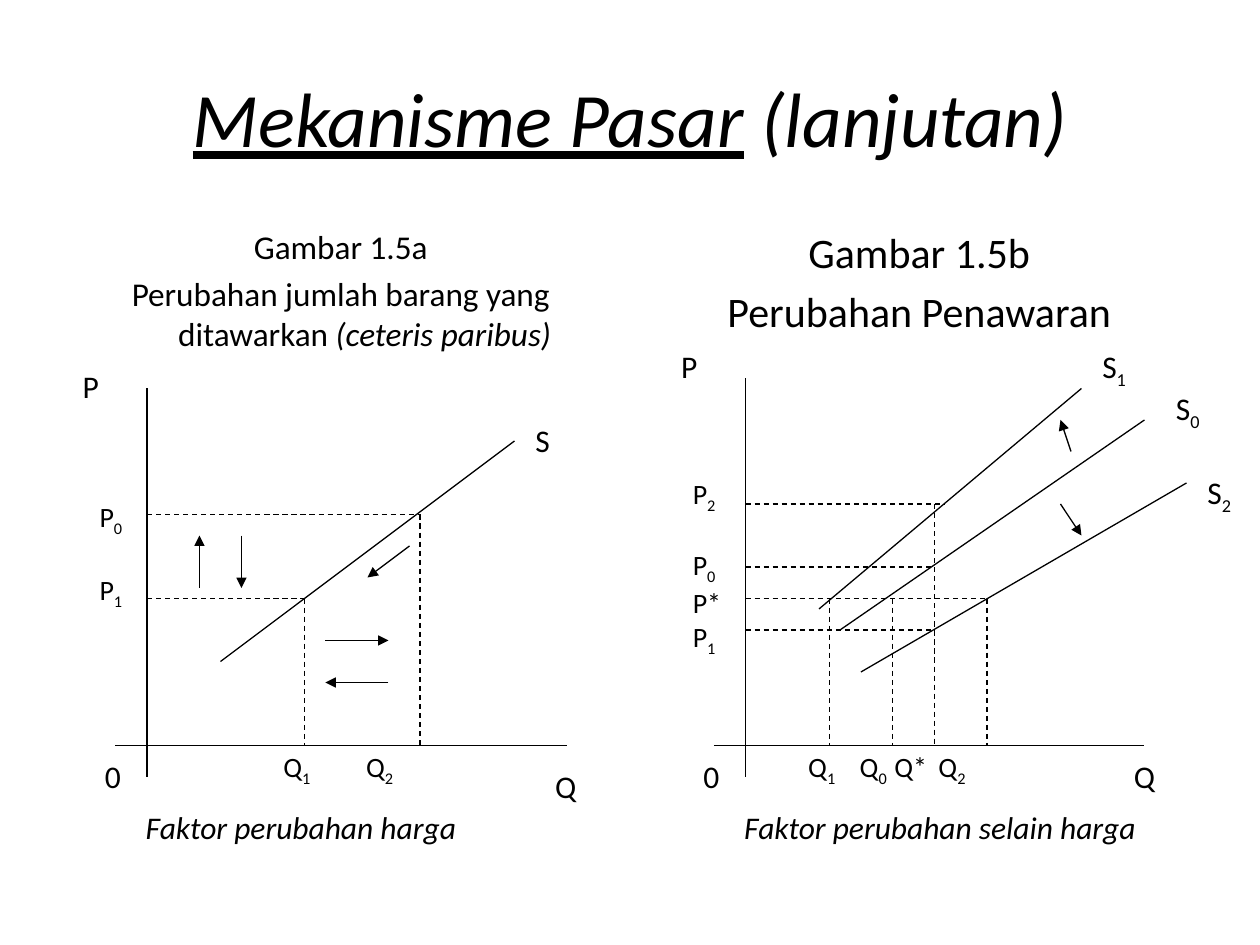
from lxml import etree
from pptx import Presentation
from pptx.dml.color import RGBColor
from pptx.enum.dml import MSO_LINE
from pptx.enum.shapes import MSO_CONNECTOR
from pptx.enum.text import MSO_ANCHOR, PP_ALIGN
from pptx.oxml.ns import qn
from pptx.util import Inches, Pt

STRAIGHT = MSO_CONNECTOR.STRAIGHT
DASH = MSO_LINE.DASH
CENTER = PP_ALIGN.CENTER
MIDDLE = MSO_ANCHOR.MIDDLE

COLOURS = {"ink": "000000", "background": "FFFFFF"}
FONT = "Calibri"
SLIDE_WIDTH, SLIDE_HEIGHT = Inches(10), Inches(7.5)
COLUMNS, ROWS = 120, 90
AXIS_ROW = 71
LABEL_HEIGHT = 5
ITALIC = {"italic": True}

SUPPLY_MOVEMENT = {
    "axes": [(14, 37, 14, 74), (11, 71, 54, 71)],
    "curves": [(21, 63, 49, 42)],
    "price_guides": [(57, 29), (49, 40)],
    "quantity_guides": [(29, 57), (40, 49)],
    "arrows": [(19, 56, 19, 51), (23, 51, 23, 56), (31, 61, 37, 61),
               (37, 65, 31, 65), (39, 52, 35, 55)],
    "names": [("P", "", 6.7, 34.4), ("0", "", 8.8, 71.5),
              ("Q", "", 51.7, 72.5), ("S", "", 49.8, 39.5)],
    "price_column": 8.3,
    "prices": [("P", "0", 47), ("P", "1", 53.9)],
    "quantities": [("Q", "1", 25.8), ("Q", "2", 33.7)],
    "footer": ("Faktor perubahan harga", 12.7, 36.6),
    "caption_column": 6,
    "caption_size": 19,
    "caption": [
        [("Gambar 1.5a", {})],
        [("Perubahan jumlah barang yang ditawarkan ", {}),
         ("(ceteris paribus)", ITALIC)],
    ],
}

SUPPLY_SHIFT = {
    "axes": [(71, 36, 71, 74), (68, 71, 109, 71)],
    "curves": [(78, 58, 103, 37), (82, 64, 113, 46), (80, 60, 109, 40)],
    "price_guides": [(48, 90), (54, 89), (57, 94), (60, 89)],
    "quantity_guides": [(79, 57), (85, 57), (94, 57), (89, 48)],
    "arrows": [(101, 48, 103, 51), (102, 43, 101, 40)],
    "names": [("P", "", 63.7, 32.5), ("0", "", 65.8, 71.5),
              ("Q", "", 106.8, 71.5), ("S", "1", 103.8, 32.5),
              ("S", "0", 110.8, 36.5), ("S", "2", 113.8, 44.5)],
    "price_column": 64.8,
    "prices": [("P", "2", 44.8), ("P", "0", 51.6),
               ("P*", "", 55.2), ("P", "1", 58.4)],
    "quantities": [("Q", "1", 75.8), ("Q", "0", 80.7),
                   ("Q*", "", 84), ("Q", "2", 88.2)],
    "footer": ("Faktor perubahan selain harga", 69.7, 45.7),
    "caption_column": 61.1,
    "caption_size": 24,
    "caption": [[("Gambar 1.5b", {})], [("Perubahan Penawaran", {})]],
}


def across(column):
    return round(SLIDE_WIDTH * column / COLUMNS)


def down(row):
    return round(SLIDE_HEIGHT * row / ROWS)


def add_run(paragraph, text, size, formats):
    run = paragraph.add_run()
    run.text = text
    settings = {"name": FONT, "size": Pt(size), **formats}
    for name, value in settings.items():
        setattr(run.font, name, value)
    run.font.color.rgb = RGBColor.from_string(COLOURS["ink"])
    return run


def add_text_box(slide, column, row, width, height):
    box = slide.shapes.add_textbox(across(column), down(row), across(width), down(height))
    box.text_frame.word_wrap = True
    return box.text_frame


def add_label(slide, text, subscript, column, row, size):
    width = 5.8 if subscript or len(text) > 1 else 5
    frame = add_text_box(slide, column, row, width, LABEL_HEIGHT)
    paragraph = frame.paragraphs[0]
    add_run(paragraph, text, size, {})
    if subscript:
        run = add_run(paragraph, subscript, size, {})
        run._r.get_or_add_rPr().set("baseline", "-25000")


def add_line(slide, start_column, start_row, end_column, end_row, dashed=False, arrow=False):
    connector = slide.shapes.add_connector(
        STRAIGHT, across(start_column), down(start_row), across(end_column), down(end_row))
    connector.line.color.rgb = RGBColor.from_string(COLOURS["ink"])
    connector.line.width = Pt(0.75)
    if dashed:
        connector.line.dash_style = DASH
    properties = connector._element.spPr
    if arrow:
        etree.SubElement(properties.find(qn("a:ln")), qn("a:tailEnd"), type="triangle")
    etree.SubElement(properties, qn("a:effectLst"))


def add_title(slide):
    title = slide.shapes.title
    placement = {"left": across(6), "top": down(3.6), "width": across(108), "height": down(15)}
    for name, value in placement.items():
        setattr(title, name, value)
    title.text_frame.vertical_anchor = MIDDLE
    paragraph = title.text_frame.paragraphs[0]
    paragraph.alignment = CENTER
    add_run(paragraph, "Mekanisme Pasar", 44, {"italic": True, "underline": True})
    add_run(paragraph, " (lanjutan)", 44, ITALIC)


def add_caption(slide, column, size, lines):
    frame = add_text_box(slide, column, 21, 52.9, 59.4)
    for index, line in enumerate(lines):
        paragraph = frame.add_paragraph() if index else frame.paragraphs[0]
        paragraph.alignment = CENTER
        paragraph.space_before = Pt(size * 0.2)
        properties = paragraph._p.get_or_add_pPr()
        properties.set("marL", str(Inches(0.38)))
        properties.set("indent", str(-Inches(0.38)))
        for text, formats in line:
            add_run(paragraph, text, size, formats)


def add_diagram(slide, diagram):
    add_caption(slide, diagram["caption_column"], diagram["caption_size"], diagram["caption"])
    for line in diagram["axes"] + diagram["curves"]:
        add_line(slide, *line)
    price_axis = diagram["axes"][0][0]
    for row, end_column in diagram["price_guides"]:
        add_line(slide, price_axis, row, end_column, row, dashed=True)
    for column, start_row in diagram["quantity_guides"]:
        add_line(slide, column, start_row, column, AXIS_ROW, dashed=True)
    for line in diagram["arrows"]:
        add_line(slide, *line, arrow=True)
    for name in diagram["names"]:
        add_label(slide, *name, size=18)
    for text, subscript, row in diagram["prices"]:
        add_label(slide, text, subscript, diagram["price_column"], row, 16)
    for text, subscript, column in diagram["quantities"]:
        add_label(slide, text, subscript, column, 70.8, 16)
    text, column, width = diagram["footer"]
    frame = add_text_box(slide, column, 76.4, width, LABEL_HEIGHT)
    add_run(frame.paragraphs[0], text, 18, ITALIC)


def main():
    presentation = Presentation()
    presentation.slide_width = SLIDE_WIDTH
    presentation.slide_height = SLIDE_HEIGHT
    slide = presentation.slides.add_slide(presentation.slide_layouts[5])
    slide.background.fill.solid()
    slide.background.fill.fore_color.rgb = RGBColor.from_string(COLOURS["background"])
    add_title(slide)
    for diagram in (SUPPLY_MOVEMENT, SUPPLY_SHIFT):
        add_diagram(slide, diagram)
    presentation.save("out.pptx")


if __name__ == "__main__":
    main()
